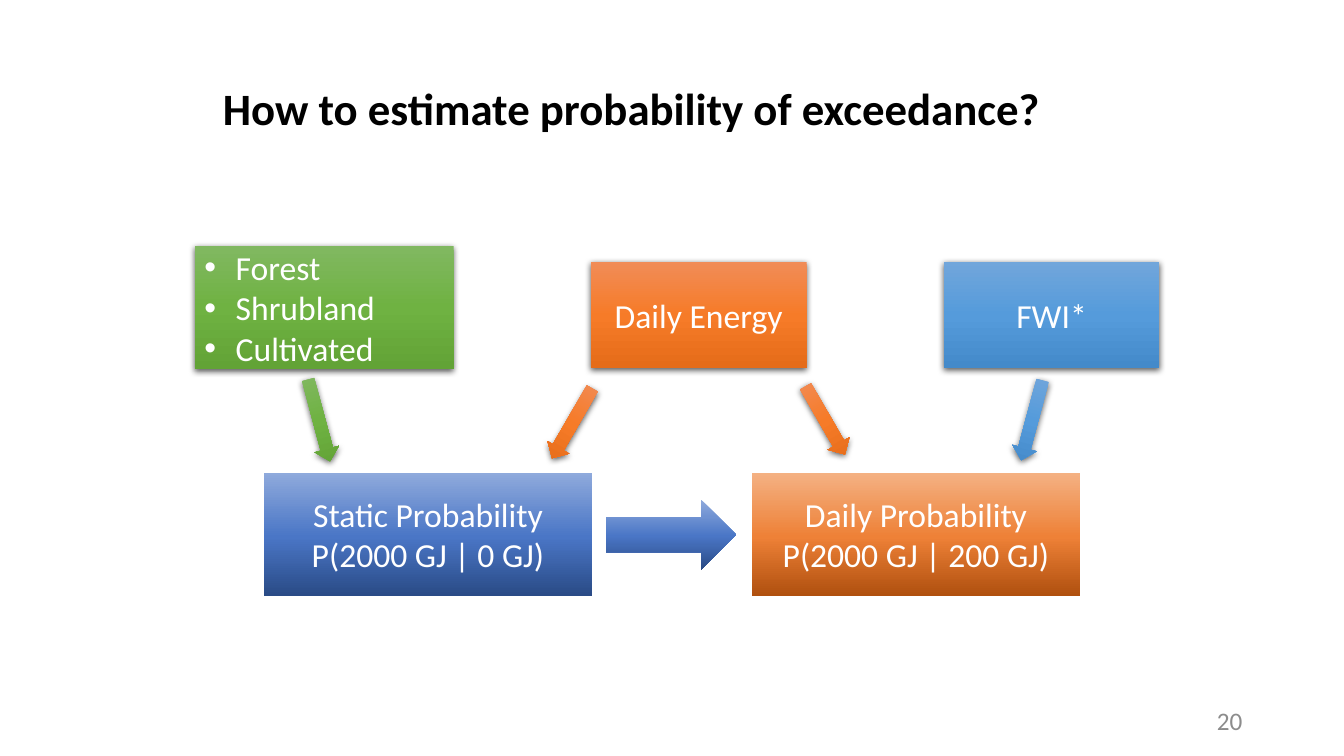
"""Build the slide on estimating the probability of exceedance."""
from copy import deepcopy

from pptx import Presentation
from pptx.dml.color import RGBColor
from pptx.enum.shapes import MSO_SHAPE as Shape
from pptx.enum.text import MSO_ANCHOR as Anchor, MSO_AUTO_SIZE as AutoSize, PP_ALIGN as Align
from pptx.oxml import parse_xml
from pptx.oxml.ns import nsdecls, qn
from pptx.util import Pt

PX = 9144
BLACK = RGBColor(0x00, 0x00, 0x00)
WHITE = RGBColor(0xFF, 0xFF, 0xFF)
GREY = RGBColor(0x8C, 0x8C, 0x8C)
GREEN = RGBColor(0x81, 0xB8, 0x61), RGBColor(0x6F, 0xB2, 0x42), RGBColor(0x62, 0xA3, 0x36)
ORANGE = RGBColor(0xF1, 0x8C, 0x57), RGBColor(0xF6, 0x7B, 0x28), RGBColor(0xE5, 0x6C, 0x19)
SKY = RGBColor(0x71, 0xA6, 0xDB), RGBColor(0x55, 0x9B, 0xDB), RGBColor(0x44, 0x8A, 0xCA)
NAVY = RGBColor(0x8F, 0xAA, 0xDC), RGBColor(0x4A, 0x76, 0xC6), RGBColor(0x2A, 0x4B, 0x86)
RUST = RGBColor(0xF4, 0xB1, 0x83), RGBColor(0xEE, 0x81, 0x37), RGBColor(0xB0, 0x50, 0x0F)

TITLE_FONT = {"name": "Calibri", "size": Pt(32), "bold": True}
BOX_FONT = {"name": "Calibri", "size": Pt(24)}
NUMBER_FONT = {"name": "Calibri", "size": Pt(18)}

SHADOW = (
    f'<a:outerShdw {nsdecls("a")} blurRad="{Pt(4.5)}" dist="{Pt(1.5)}" dir="5400000" '
    'algn="ctr" rotWithShape="0"><a:srgbClr val="000000"><a:alpha val="63000"/>'
    '</a:srgbClr></a:outerShdw>'
)


def to_emu(*lengths):
    """Turn px lengths into EMU."""
    return [length * PX for length in lengths]


def write_text(frame, lines, font, color, align, bullet=None):
    """Write one paragraph per line in the given format."""
    for index, line in enumerate(lines):
        para = frame.add_paragraph() if index else frame.paragraphs[0]
        para.alignment = align
        span = para.add_run()
        span.text = line
        for key, value in font.items():
            setattr(span.font, key, value)
        span.font.color.rgb = color
        if bullet:
            props = para._p.get_or_add_pPr()
            props.set("marL", str(31 * PX))
            props.set("indent", str(-31 * PX))
            props.append(parse_xml(f'<a:buFont {nsdecls("a")} typeface="Arial"/>'))
            props.append(parse_xml(f'<a:buChar {nsdecls("a")} char="{bullet}"/>'))


def add_block(page, kind, place, colors, middle=50, shadow=True, turn=0):
    """Add a shape shaded from top to bottom through three colours."""
    block = page.shapes.add_shape(kind, *to_emu(*place))
    block.rotation = turn
    block.fill.gradient()
    block.fill.gradient_angle = 270
    stop_list = block._element.spPr.find(".//" + qn("a:gsLst"))
    stop_list.insert(1, deepcopy(stop_list[0]))
    for stop, color, position in zip(block.fill.gradient_stops, colors, (0, middle, 100)):
        stop.color.rgb = color
        stop.position = position / 100
    block.line.fill.background()
    block.shadow.inherit = False
    if shadow:
        block._element.spPr.find(qn("a:effectLst")).append(parse_xml(SHADOW))
    return block


def add_box(page, place, colors, lines, align=Align.CENTER, bullet=None, **look):
    """Add a shaded rectangle with white text."""
    box = add_block(page, Shape.RECTANGLE, place, colors, **look)
    box.text_frame.vertical_anchor = Anchor.MIDDLE
    write_text(box.text_frame, lines, BOX_FONT, WHITE, align, bullet)


def add_title(page, text):
    """Move the title placeholder and fill it."""
    title = page.shapes.title
    title.left, title.top, title.width, title.height = to_emu(211, 75, 920, 64)
    frame = title.text_frame
    frame.word_wrap = True
    frame.auto_size = AutoSize.SHAPE_TO_FIT_TEXT
    frame.vertical_anchor = Anchor.TOP
    write_text(frame, [text], TITLE_FONT, BLACK, Align.LEFT)


def add_page_number(page, number):
    """Add the page number at the lower right."""
    frame = page.shapes.add_textbox(*to_emu(942, 695, 300, 40)).text_frame
    frame.word_wrap = True
    frame.vertical_anchor = Anchor.MIDDLE
    write_text(frame, [number], NUMBER_FONT, GREY, Align.RIGHT)


def main():
    """Build and save the slide."""
    deck = Presentation()
    deck.slide_width, deck.slide_height = to_emu(1333, 750)
    page = deck.slides.add_slide(deck.slide_layouts[5])
    add_title(page, "How to estimate probability of exceedance?")

    flat = {"middle": 52, "shadow": False}
    for left, colors, lines in (
        (262, NAVY, ["Static Probability", "P(2000 GJ | 0 GJ)"]),
        (746, RUST, ["Daily Probability", "P(2000 GJ | 200 GJ)"]),
    ):
        add_box(page, (left, 469, 325, 122), colors, lines, **flat)

    add_box(page, (193, 244, 257, 122), GREEN, ["Forest", "Shrubland", "Cultivated"],
            align=Align.LEFT, bullet="•")
    for left, colors, label in ((586, ORANGE, "Daily Energy"), (936, SKY, "FWI*")):
        add_box(page, (left, 260, 214, 105), colors, [label])

    for left, top, height, turn, colors in (
        (304, 375, 84, 345, GREEN),
        (555, 380, 80, 30, ORANGE),
        (806, 378, 78, 330, ORANGE),
        (1011, 376, 82, 15, SKY),
    ):
        add_block(page, Shape.DOWN_ARROW, (left, top, 25, height), colors, turn=turn)
    add_block(page, Shape.RIGHT_ARROW, (601, 496, 129, 69), NAVY, **flat)

    add_page_number(page, "20")
    deck.save("out.pptx")


if __name__ == "__main__":
    main()
